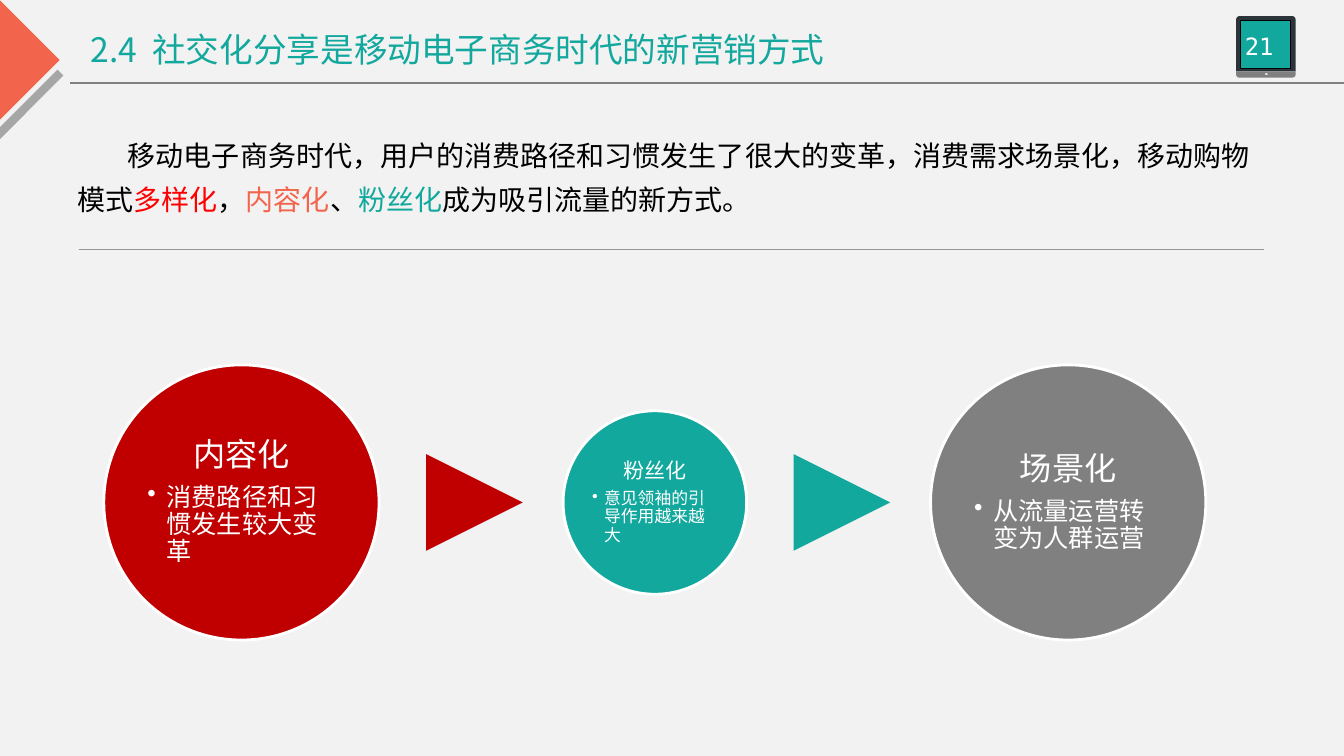
from lxml import etree
from pptx import Presentation
from pptx.dml.color import RGBColor
from pptx.enum.shapes import MSO_CONNECTOR, MSO_SHAPE
from pptx.enum.text import MSO_ANCHOR, PP_ALIGN
from pptx.oxml.ns import qn
from pptx.util import Inches, Pt

STRAIGHT = MSO_CONNECTOR.STRAIGHT
CIRCLE, TRIANGLE = MSO_SHAPE.OVAL, MSO_SHAPE.ISOSCELES_TRIANGLE
CORNER, RECTANGLE = MSO_SHAPE.RIGHT_TRIANGLE, MSO_SHAPE.RECTANGLE
ROUND_TOP = MSO_SHAPE.ROUND_2_SAME_RECTANGLE
TOP, MIDDLE = MSO_ANCHOR.TOP, MSO_ANCHOR.MIDDLE
CENTER = PP_ALIGN.CENTER

SANS, SERIF, MONO = "Noto Sans CJK SC", "Times New Roman", "DejaVu Sans Mono"
BACKGROUND, WHITE, BLACK = "F2F2F2", "FFFFFF", "000000"
TEAL, CORAL, RED, CRIMSON, GREY = "12A89D", "F2644C", "FF0000", "C00000", "808080"


def rgb(color):
    return RGBColor.from_string(color)


def add_block(slide, preset, box, fill, line=None, line_width=0.75, rotation=0):
    block = slide.shapes.add_shape(preset, *map(Inches, box))
    block.shadow.inherit = False
    block.fill.solid()
    block.fill.fore_color.rgb = rgb(fill)
    block.rotation = rotation
    if line:
        block.line.color.rgb = rgb(line)
        block.line.width = Pt(line_width)
    else:
        block.line.fill.background()
    return block


def add_rule(slide, start, end, color, width):
    rule = slide.shapes.add_connector(STRAIGHT, *map(Inches, start + end))
    rule.line.color.rgb = rgb(color)
    rule.line.width = Pt(width)
    etree.SubElement(rule._element.spPr, qn("a:effectLst"))


def add_frame(slide, box, insets=(0.1, 0.05), anchor=TOP):
    frame = slide.shapes.add_textbox(*map(Inches, box)).text_frame
    frame.word_wrap = True
    frame.vertical_anchor = anchor
    frame.margin_left = frame.margin_right = Inches(insets[0])
    frame.margin_top = frame.margin_bottom = Inches(insets[1])
    return frame


def add_run(paragraph, words, size, font, color):
    run = paragraph.add_run()
    run.text = words
    run.font.size = Pt(size)
    run.font.name = font
    run.font.color.rgb = rgb(color)
    return run


def set_bullet(paragraph, indent):
    properties = paragraph._p.get_or_add_pPr()
    properties.set("marL", str(Inches(indent)))
    properties.set("indent", str(-Inches(indent)))
    etree.SubElement(properties, qn("a:buChar")).set("char", "•")


def add_tablet(slide, box, number):
    left, top, width, height = box
    screen_part = height * 0.9
    base_part = height - screen_part
    body = add_block(slide, ROUND_TOP, (left, top, width, screen_part), "2D333B")
    body.adjustments[0] = 0.06
    base = add_block(slide, ROUND_TOP, (left, top + screen_part, width, base_part),
                     GREY, rotation=180)
    base.adjustments[0] = 0.5
    add_block(slide, CIRCLE, (left + 0.28, top + 0.56, 0.04, 0.03), BACKGROUND, GREY)
    add_block(slide, RECTANGLE, (left + 0.04, top + 0.04, 0.5, 0.48), TEAL, BLACK)
    page = add_frame(slide, (left - 0.02, top + 0.11, 0.64, 0.38), (0.09, 0.05))
    page.paragraphs[0].alignment = CENTER
    add_run(page.paragraphs[0], number, 17, MONO, WHITE)


def add_header(slide, box, section, title):
    left, top, width, height = box
    # Corner ornament
    add_block(slide, CORNER, (left - 0.46, top + 0.16, 0.87, 0.87), CORAL, rotation=225)
    add_rule(slide, (left - 0.11, top + 1.43), (left + 0.6, top + 0.72), "A6A6A6", 6)
    # Rule and page number
    add_rule(slide, (left + 0.69, top + height), (left + width, top + height), GREY, 1.5)
    add_tablet(slide, (left + 12.26, top + 0.16, 0.59, 0.61), "21 ")
    # Title, with a widened space after the section number
    heading = add_frame(slide, (left + 0.8, top + 0.27, 10.01, 0.48), anchor=MIDDLE)
    line = heading.paragraphs[0]
    line.line_spacing = 0.9
    add_run(line, section, 24, SANS, TEAL)
    gap = add_run(line, " ", 24, SANS, TEAL)
    gap._r.get_or_add_rPr().set("spc", "540")
    add_run(line, title, 24, SANS, TEAL)


def add_intro(slide, box, pieces):
    left, top, width, height = box
    paragraph = add_frame(slide, (left, top, width, 0.56)).paragraphs[0]
    paragraph.line_spacing = 1.3
    paragraph._p.get_or_add_pPr().set("indent", str(Inches(0.5)))
    for words, color in pieces:
        add_run(paragraph, words, 20, SANS, color)
    bottom = top + height
    add_rule(slide, (left + 0.11, bottom), (left + width - 0.13, bottom), "969696", 0.5)


def add_stage(slide, box, fill, stage, detail, sizes, indent):
    left, top, diameter, _ = box
    add_block(slide, CIRCLE, box, fill, WHITE, 2)
    margin = diameter * 0.147
    side = diameter - 2 * margin
    inset = 0.03 if diameter > 2 else 0.02
    frame = add_frame(slide, (left + margin, top + margin, side, side),
                      (inset, inset), MIDDLE)
    heading = frame.paragraphs[0]
    heading.alignment = CENTER
    heading.line_spacing = 0.9
    heading.space_after = Pt(sizes[0] * 0.35)
    add_run(heading, stage, sizes[0], SERIF, WHITE)
    point = frame.add_paragraph()
    point.line_spacing = 0.9
    point.space_after = Pt(sizes[1] * 0.15)
    set_bullet(point, indent)
    add_run(point, detail, sizes[1], SERIF, WHITE)


def add_process(slide, box, stages):
    left, top, _, height = box
    middle = top + height / 2
    arrow, gap_before, gap_after = 0.96, 0.465, 0.4
    for index, (diameter, fill, *content) in enumerate(stages):
        add_stage(slide, (left, middle - diameter / 2, diameter, diameter), fill, *content)
        left += diameter + gap_before
        if index < len(stages) - 1:
            add_block(slide, TRIANGLE, (left, middle - arrow / 2, arrow, arrow),
                      fill, rotation=90)
        left += arrow + gap_after


def main():
    deck = Presentation()
    deck.slide_width, deck.slide_height = Inches(13.33), Inches(7.5)
    slide = deck.slides.add_slide(deck.slide_layouts[6])
    slide.background.fill.solid()
    slide.background.fill.fore_color.rgb = rgb(BACKGROUND)

    add_header(slide, (0, 0, 13.33, 0.82), "2.4", "社交化分享是移动电子商务时代的新营销方式")
    add_intro(slide, (0.67, 1.23, 12, 1.24), [
        ("移动电子商务时代，用户的消费路径和习惯发生了很大的变革，消费需求场景化，移动购物模式", BLACK),
        ("多样化", RED),
        ("，", BLACK),
        ("内容化", CORAL),
        ("、", BLACK),
        ("粉丝化", TEAL),
        ("成为吸引流量的新方式。", BLACK),
    ])
    large, small = (23, 18), (15, 12)
    add_process(slide, (1.03, 3.62, 10.93, 2.73), [
        (2.73, CRIMSON, "内容化", "消费路径和习惯发生较大变革", large, 0.19),
        (1.82, TEAL, "粉丝化", "意见领袖的引导作用越来越大", small, 0.12),
        (2.73, GREY, "场景化", "从流量运营转变为人群运营", large, 0.19),
    ])
    deck.save("out.pptx")


if __name__ == "__main__":
    main()
